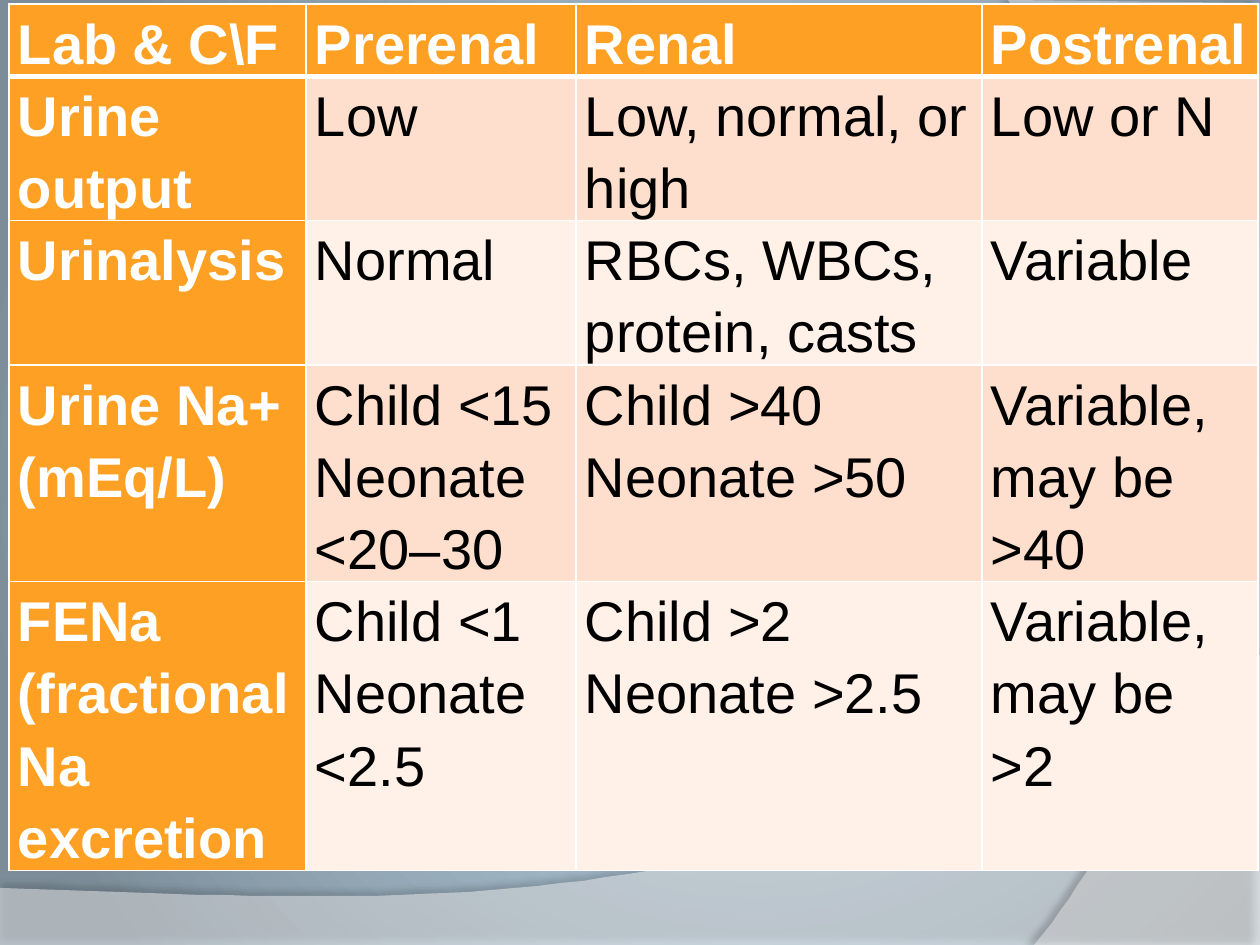
from dataclasses import dataclass

from pptx import Presentation
from pptx.dml.color import RGBColor
from pptx.enum.text import MSO_ANCHOR, PP_ALIGN
from pptx.oxml import parse_xml
from pptx.util import Emu, Pt

TOP = MSO_ANCHOR.TOP
LEFT = PP_ALIGN.LEFT
EMU_PER_PX = 914400 / 126
EMU_PER_PT = 12700
NS = ('xmlns:a="http://schemas.openxmlformats.org/drawingml/2006/main" '
      'xmlns:p="http://schemas.openxmlformats.org/presentationml/2006/main"')
SLIDE_W, SLIDE_H = 1260, 945

Point = tuple[int, int]


@dataclass(frozen=True)
class Theme:
    font: str = "Arial"
    size: int = 32
    line_spacing: float = 1.15
    white: str = "FFFFFF"
    black: str = "000000"
    heading: str = "FDA023"
    bands: tuple[str, str] = ("FEDFCD", "FFF0E8")
    glow: str = "CBE7FC"
    edge: str = "7C8D99"
    thin: int = 1
    thick: int = 3


@dataclass(frozen=True)
class Wave:
    """A translucent sweep: straight corners, then one curve to close it."""
    corners: tuple[Point, ...]
    curve: tuple[Point, Point, Point]
    opacity: int
    shadow_opacity: int
    shadow_distance: float
    shadow_angle: int


@dataclass(frozen=True)
class Finding:
    height: int
    texts: tuple[str, ...]


THEME = Theme()
WAVES = (
    Wave(((0, 888), (0, 945), (1260, 945), (1260, 655)),
         ((704, 919), (493, 906), (0, 888)), 45, 35, 3.5, 270),
    Wave(((1008, 0), (1260, 3), (1260, 945), (1034, 945)),
         ((1178, 780), (1283, 378), (1008, 0)), 40, 45, 4, 180),
)
TABLE_LEFT, TABLE_TOP = 9, 4
COLUMN_WIDTHS = (297, 270, 406, 276)
FINDINGS = (
    Finding(72, ("Lab & C\\F", "Prerenal", "Renal", "Postrenal")),
    Finding(144, ("Urine output", "Low", "Low, normal, or high", "Low or N")),
    Finding(144, ("Urinalysis", "Normal", "RBCs, WBCs, protein, casts",
                  "Variable")),
    Finding(216, ("Urine Na+ (mEq/L)", "Child <15\nNeonate <20–30",
                  "Child >40\nNeonate >50", "Variable, may be >40")),
    Finding(288, ("FENa (fractional Na excretion", "Child <1\nNeonate <2.5",
                  "Child >2\nNeonate >2.5", "Variable, may be >2")),
)


def px(length: int) -> Emu:
    return Emu(round(length * EMU_PER_PX))


def bezier(start: Point, curve: tuple[Point, Point, Point],
           steps: int = 48) -> list[tuple[float, float]]:
    controls = (start, *curve)
    points = []
    for step in range(1, steps + 1):
        t = step / steps
        weights = ((1 - t) ** 3, 3 * t * (1 - t) ** 2,
                   3 * t ** 2 * (1 - t), t ** 3)
        points.append(tuple(sum(w * c[axis] for w, c in zip(weights, controls))
                            for axis in (0, 1)))
    return points


def paint_background(slide) -> None:
    slide.background.fill.solid()
    properties = slide.background.fill._xPr
    solid = properties[0]
    properties.replace(solid, parse_xml(
        f'<a:gradFill {NS} rotWithShape="1"><a:gsLst>'
        f'<a:gs pos="0"><a:srgbClr val="{THEME.glow}"/></a:gs>'
        f'<a:gs pos="100000"><a:srgbClr val="{THEME.edge}"/></a:gs></a:gsLst>'
        '<a:path path="circle"><a:fillToRect l="60000" t="50000" r="40000" '
        'b="50000"/></a:path></a:gradFill>'))


def draw_wave(slide, wave: Wave) -> None:
    start, *rest = wave.corners
    builder = slide.shapes.build_freeform(*start, scale=EMU_PER_PX)
    builder.add_line_segments(rest + bezier(rest[-1], wave.curve), close=True)
    sweep = builder.convert_to_shape()
    sweep.fill.solid()
    sweep.fill.fore_color.rgb = RGBColor.from_string(THEME.white)
    sweep.line.fill.background()
    sweep.shadow.inherit = False

    # Fill transparency and soft shadow
    properties = sweep._element.spPr
    properties.find(".//{*}solidFill/{*}srgbClr").append(
        parse_xml(f'<a:alpha {NS} val="{wave.opacity * 1000}"/>'))
    properties.find("{*}effectLst").append(parse_xml(
        f'<a:outerShdw {NS} blurRad="{4 * EMU_PER_PT}" '
        f'dist="{round(wave.shadow_distance * EMU_PER_PT)}" '
        f'dir="{wave.shadow_angle * 60000}" algn="ctr" rotWithShape="0">'
        f'<a:srgbClr val="{THEME.black}">'
        f'<a:alpha val="{wave.shadow_opacity * 1000}"/>'
        '</a:srgbClr></a:outerShdw>'))


def set_borders(cell, widths: dict[str, int]) -> None:
    properties = cell._tc.get_or_add_tcPr()
    for position, (side, width) in enumerate(widths.items()):
        properties.insert(position, parse_xml(
            f'<a:ln{side} {NS} w="{width * EMU_PER_PT}"><a:solidFill>'
            f'<a:srgbClr val="{THEME.white}"/></a:solidFill></a:ln{side}>'))


def fill_cell(cell, text: str, row: int, column: int) -> None:
    is_heading = row == 0 or column == 0
    layout = {"margin_left": px(9), "margin_right": px(9), "margin_top": 0,
              "margin_bottom": 0, "vertical_anchor": TOP}
    for attribute, value in layout.items():
        setattr(cell, attribute, value)
    cell.fill.solid()
    cell.fill.fore_color.rgb = RGBColor.from_string(
        THEME.heading if is_heading else THEME.bands[(row - 1) % 2])
    set_borders(cell, {"L": THEME.thin, "R": THEME.thin,
                       "T": THEME.thick if row == 1 else THEME.thin,
                       "B": THEME.thick if row == 0 else THEME.thin})

    cell.text = text
    lettering = {"name": THEME.font, "size": Pt(THEME.size),
                 "bold": is_heading}
    for paragraph in cell.text_frame.paragraphs:
        paragraph.alignment = LEFT
        paragraph.line_spacing = THEME.line_spacing
        for run in paragraph.runs:
            for attribute, value in lettering.items():
                setattr(run.font, attribute, value)
            run.font.color.rgb = RGBColor.from_string(
                THEME.white if is_heading else THEME.black)


def draw_findings(slide) -> None:
    table = slide.shapes.add_table(
        len(FINDINGS), len(COLUMN_WIDTHS), px(TABLE_LEFT), px(TABLE_TOP),
        px(sum(COLUMN_WIDTHS)), px(sum(f.height for f in FINDINGS))).table
    table.first_col = True
    for column, width in zip(table.columns, COLUMN_WIDTHS):
        column.width = px(width)
    for row, finding in enumerate(FINDINGS):
        table.rows[row].height = px(finding.height)
        for column, text in enumerate(finding.texts):
            fill_cell(table.cell(row, column), text, row, column)


def main() -> None:
    deck = Presentation()
    deck.slide_width, deck.slide_height = px(SLIDE_W), px(SLIDE_H)
    slide = deck.slides.add_slide(deck.slide_layouts[6])

    # Backdrop
    paint_background(slide)
    for wave in WAVES:
        draw_wave(slide, wave)

    # Comparison of kidney failure types
    draw_findings(slide)
    deck.save("out.pptx")


if __name__ == "__main__":
    main()
